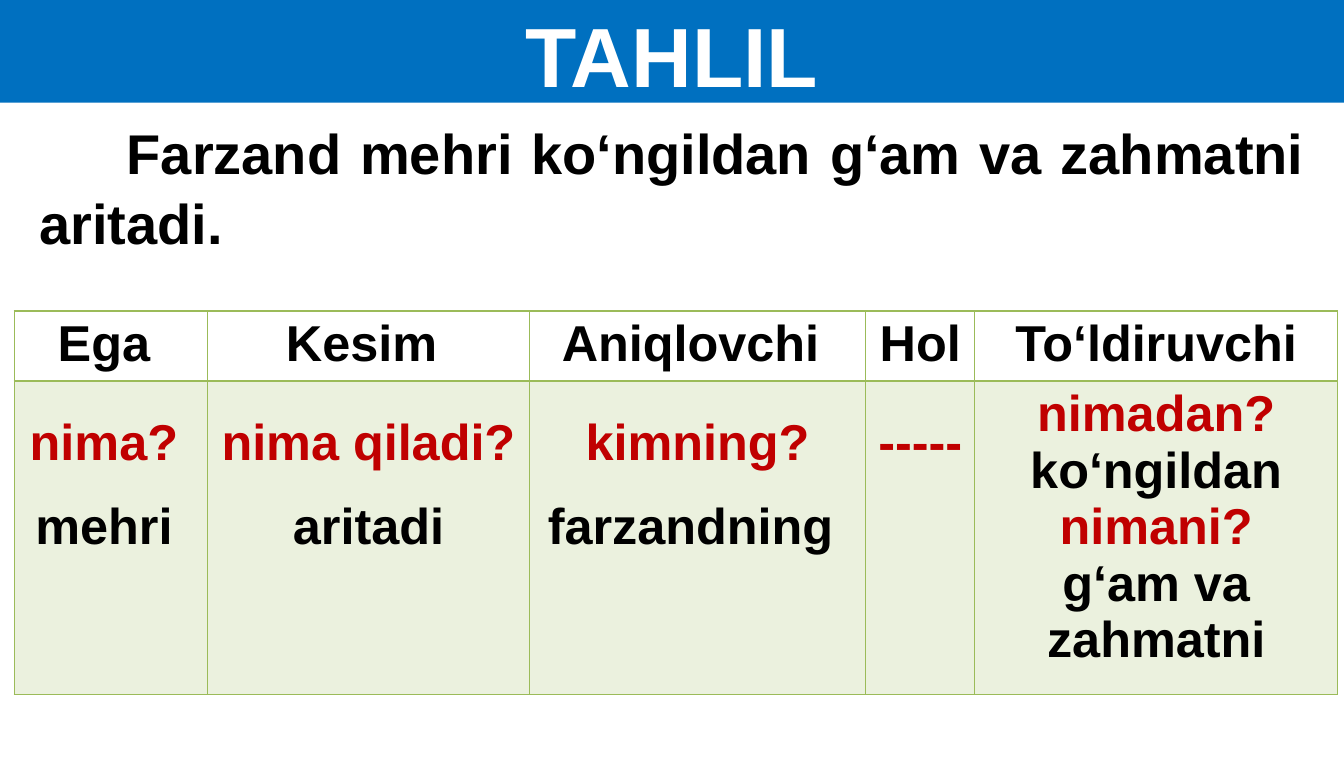
from dataclasses import dataclass

from lxml.etree import SubElement
from pptx import Presentation
from pptx.dml.color import RGBColor
from pptx.enum.text import MSO_ANCHOR, MSO_AUTO_SIZE, PP_ALIGN
from pptx.oxml.ns import qn
from pptx.util import Cm, Pt

COLORS = {
    "white": "FFFFFF",
    "black": "000000",
    "blue": "0070C0",
    "red": "C00000",
    "green": "9BBB59",
    "pale": "EBF1DE",
}
TABLE_LEFT, TABLE_TOP = 0.36, 7.84
HEADER_HEIGHT, ANSWER_HEIGHT = 1.77, 7.89


@dataclass
class Column:
    header: str
    width: float
    answers: list[tuple[str, str]]
    spacing: float = 1.5


COLUMNS = [
    Column("Ega ", 4.87, [("nima? ", "red"), ("mehri ", "black")]),
    Column("Kesim ", 8.11, [("nima qiladi?", "red"), ("aritadi", "black")]),
    Column("Aniqlovchi ", 8.47, [("kimning?", "red"), ("farzandning ", "black")]),
    Column("Hol ", 2.75, [("-----", "red")]),
    Column("To‘ldiruvchi", 9.14, [
        ("nimadan?", "red"), ("ko‘ngildan", "black"),
        ("nimani?", "red"), ("g‘am va zahmatni", "black"),
    ], 1.0),
]


def rgb(name: str) -> RGBColor:
    return RGBColor.from_string(COLORS[name])


def add_run(p, text: str, size: int, color: str) -> None:
    r = p.add_run()
    r.text = text
    r.font.name = "Arial"
    r.font.size = Pt(size)
    r.font.bold = True
    r.font.color.rgb = rgb(color)


def place(sp, left: float, top: float, width: float, height: float) -> None:
    sp.left, sp.top, sp.width, sp.height = Cm(left), Cm(top), Cm(width), Cm(height)
    tf = sp.text_frame
    tf.auto_size = MSO_AUTO_SIZE.NONE
    tf.word_wrap = True
    tf.vertical_anchor = MSO_ANCHOR.TOP


def set_borders(cell, bottom: float, top: float) -> None:
    tc_pr = cell._tc.get_or_add_tcPr()
    for side, width in (("L", 1), ("R", 1), ("T", top), ("B", bottom)):
        ln = SubElement(tc_pr, qn(f"a:ln{side}"), w=str(Pt(width)))
        fill = SubElement(ln, qn("a:solidFill"))
        SubElement(fill, qn("a:srgbClr"), val=COLORS["green"])


def fill_cell(cell, lines: list[tuple[str, str]], spacing: float) -> None:
    tf = cell.text_frame
    for i, (text, color) in enumerate(lines):
        p = tf.add_paragraph() if i else tf.paragraphs[0]
        p.alignment = PP_ALIGN.CENTER
        p.line_spacing = spacing
        add_run(p, text, 36, color)


def add_title(s) -> None:
    sp = s.shapes.title
    place(sp, 0, -0.23, 33.86, 2.82)
    sp.fill.solid()
    sp.fill.fore_color.rgb = rgb("blue")
    tf = sp.text_frame
    tf.margin_top = Cm(0.33)
    p = tf.paragraphs[0]
    p.alignment = PP_ALIGN.CENTER
    add_run(p, "TAHLIL", 60, "white")


def add_sentence(s) -> None:
    sp = s.placeholders[1]
    place(sp, 0.74, 2.79, 32.36, 3.68)
    p = sp.text_frame.paragraphs[0]
    p.alignment = PP_ALIGN.JUSTIFY
    p.space_before = Pt(0)
    p.line_spacing = 1.04
    p_pr = p._p.get_or_add_pPr()
    p_pr.set("marL", "0")
    p_pr.set("indent", str(Cm(2.2)))
    SubElement(p_pr, qn("a:buNone"))
    add_run(p, "Farzand mehri ko‘ngildan g‘am va zahmatni aritadi.", 40, "black")


def add_analysis_table(s) -> None:
    width = sum(col.width for col in COLUMNS)
    frame = s.shapes.add_table(2, len(COLUMNS), Cm(TABLE_LEFT), Cm(TABLE_TOP),
                               Cm(width), Cm(HEADER_HEIGHT + ANSWER_HEIGHT))
    table = frame.table
    table.first_row = table.horz_banding = False
    table.rows[0].height = Cm(HEADER_HEIGHT)
    table.rows[1].height = Cm(ANSWER_HEIGHT)
    for i, col in enumerate(COLUMNS):
        table.columns[i].width = Cm(col.width)
        header, answer = table.cell(0, i), table.cell(1, i)
        set_borders(header, bottom=2, top=1)
        set_borders(answer, bottom=1, top=2)
        header.fill.background()
        answer.fill.solid()
        answer.fill.fore_color.rgb = rgb("pale")
        fill_cell(header, [(col.header, "black")], 1.0)
        fill_cell(answer, col.answers, col.spacing)


def main() -> None:
    prs = Presentation()
    prs.slide_width, prs.slide_height = Cm(33.86), Cm(19.51)
    s = prs.slides.add_slide(prs.slide_layouts[1])
    add_title(s)
    add_sentence(s)
    add_analysis_table(s)
    prs.save("out.pptx")


if __name__ == "__main__":
    main()
